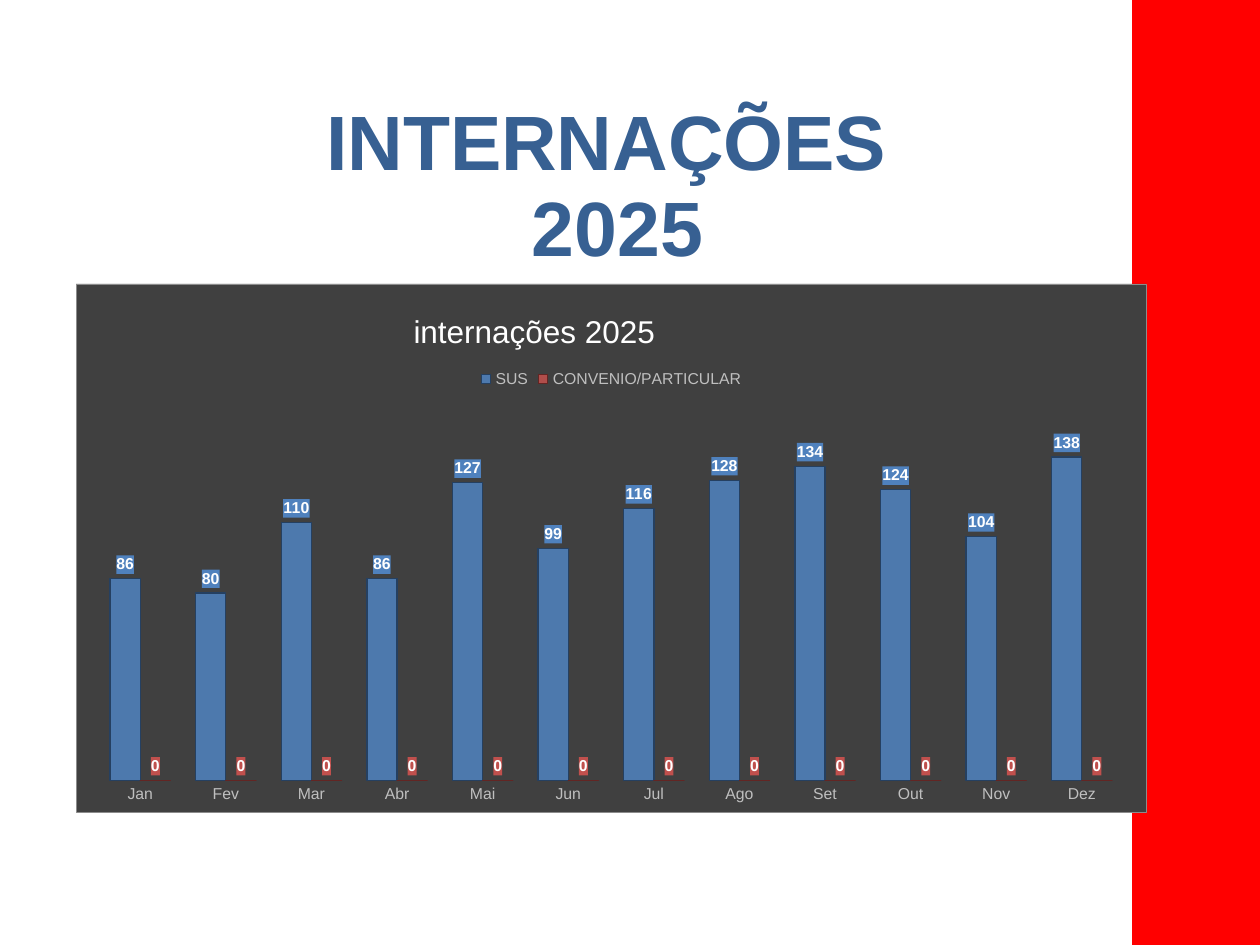
from lxml.etree import SubElement
from pptx import Presentation
from pptx.chart.data import CategoryChartData
from pptx.dml.color import RGBColor
from pptx.enum.chart import XL_CHART_TYPE, XL_LABEL_POSITION, XL_LEGEND_POSITION, XL_TICK_MARK
from pptx.enum.shapes import MSO_SHAPE
from pptx.enum.text import MSO_ANCHOR, PP_ALIGN
from pptx.oxml import parse_xml
from pptx.oxml.ns import nsdecls, qn
from pptx.util import Inches, Pt

MONTHS = ["Jan", "Fev", "Mar", "Abr", "Mai", "Jun", "Jul", "Ago", "Set", "Out", "Nov", "Dez"]
ADMISSIONS = {
    "SUS": [86, 80, 110, 86, 127, 99, 116, 128, 134, 124, 104, 138],
    "CONVENIO/PARTICULAR": [0] * len(MONTHS),
}


def color(hex_string):
    """Turn a hex string into a colour."""
    return RGBColor.from_string(hex_string)


def paint(fill, hex_string):
    """Make a fill solid in one colour."""
    fill.solid()
    fill.fore_color.rgb = color(hex_string)


def outline(line, hex_string, width):
    """Set the colour and the width in points of a line."""
    line.color.rgb = color(hex_string)
    line.width = Pt(width)


def format_font(font, size, hex_string, bold=False, name="Arial"):
    """Set the typeface, size, colour and weight of a font."""
    font.name, font.size, font.bold = name, Pt(size), bold
    font.color.rgb = color(hex_string)


def write(frame, text, align=PP_ALIGN.CENTER, spacing=None, **font_format):
    """Write one formatted paragraph into a text frame."""
    paragraph = frame.paragraphs[0]
    paragraph.text = text
    paragraph.alignment = align
    if spacing:
        paragraph.line_spacing = spacing
    for run in paragraph.runs:
        format_font(run.font, **font_format)


def set_layout(element, target=None, **shares):
    """Place a chart part by shares of the chart's size."""
    for old_layout in element.findall(qn("c:layout")):
        element.remove(old_layout)
    layout = parse_xml(f"<c:layout {nsdecls('c')}><c:manualLayout/></c:layout>")
    manual = layout[0]
    if target:
        SubElement(manual, qn("c:layoutTarget")).set("val", target)
    for side in "xy":
        SubElement(manual, qn(f"c:{side}Mode")).set("val", "edge")
    for side, share in shares.items():
        SubElement(manual, qn(f"c:{side}")).set("val", str(share))
    text = element.find(qn("c:tx"))
    element.insert(0 if text is None else 1, layout)


class SlideBuilder:
    """Hold the style and the current slide, and add elements to it."""

    accent, heading, panel, muted, white = "FF0000", "376092", "404040", "BFBFBF", "FFFFFF"
    series_styles = [("4F81BD", "254061"), ("C0504D", "632523")]

    def __init__(self, presentation):
        """Add a blank slide to the presentation."""
        self.width, self.height = presentation.slide_width, presentation.slide_height
        self.slide = presentation.slides.add_slide(presentation.slide_layouts[6])
        paint(self.slide.background.fill, self.white)

    def box(self, left, top, width, height):
        """Turn shares of the slide into lengths."""
        return (int(left * self.width), int(top * self.height),
                int(width * self.width), int(height * self.height))

    def band(self, *shares):
        """Add a plain accent rectangle."""
        shape = self.slide.shapes.add_shape(MSO_SHAPE.RECTANGLE, *self.box(*shares))
        shape.shadow.inherit = False
        paint(shape.fill, self.accent)
        outline(shape.line, self.accent, 2)

    def title(self, text, *shares):
        """Add the slide heading."""
        frame = self.slide.shapes.add_textbox(*self.box(*shares)).text_frame
        frame.word_wrap = True
        frame.vertical_anchor = MSO_ANCHOR.TOP
        write(frame, text, spacing=0.94, size=44, hex_string=self.heading, bold=True)

    def column_chart(self, title, categories, series, *shares):
        """Add a clustered column chart on a dark panel."""
        data = CategoryChartData()
        data.categories = categories
        for name, values in series.items():
            data.add_series(name, values)
        chart = self.slide.shapes.add_chart(
            XL_CHART_TYPE.COLUMN_CLUSTERED, *self.box(*shares), data).chart
        format_font(chart.font, 10, "000000")
        self.chart_panel(chart)
        self.chart_title(chart, title)
        self.chart_legend(chart)
        self.chart_axes(chart)
        plot = chart.plots[0]
        plot.gap_width, plot.overlap, plot.vary_by_categories = 84, 0, False
        for one_series, (fill, line) in zip(plot.series, self.series_styles):
            self.chart_series(one_series, fill, line)

    def chart_panel(self, chart):
        """Fill and frame the chart, and place its plot area."""
        space = chart._chartSpace
        properties = parse_xml(
            f"<c:spPr {nsdecls('c', 'a')}><a:solidFill><a:srgbClr val='{self.panel}'/></a:solidFill>"
            f"<a:ln w='{Pt(0.5)}'><a:solidFill><a:srgbClr val='8C8C8C'/></a:solidFill></a:ln></c:spPr>")
        space.find(qn("c:txPr")).addprevious(properties)
        set_layout(space.chart.plotArea, "inner", x=0.02, y=0.23, w=0.96, h=0.71)

    def chart_title(self, chart, text):
        """Write and place the chart title."""
        chart.has_title = True
        chart.chart_title.include_in_layout = False
        write(chart.chart_title.text_frame, text, size=18, hex_string=self.white)
        set_layout(chart.chart_title._element, x=0.31, y=0.04)

    def chart_legend(self, chart):
        """Put the legend above the columns."""
        chart.has_legend = True
        chart.legend.position = XL_LEGEND_POSITION.TOP
        chart.legend.include_in_layout = False
        format_font(chart.legend.font, 9, self.muted)

    def chart_axes(self, chart):
        """Show only the month names and hide the value axis."""
        months, values = chart.category_axis, chart.value_axis
        months.major_tick_mark = months.minor_tick_mark = XL_TICK_MARK.NONE
        months.format.line.fill.background()
        format_font(months.tick_labels.font, 9, self.muted)
        values.visible = values.has_major_gridlines = False
        values.minimum_scale, values.maximum_scale = 0, 160

    def chart_series(self, series, fill, line):
        """Colour the columns of a series and their value labels."""
        paint(series.format.fill, fill)
        solid_color = series._element.find(f".//{qn('a:srgbClr')}")
        SubElement(solid_color, qn("a:alpha")).set("val", "88000")
        outline(series.format.line, line, 0.75)
        series.smooth = False if hasattr(series, "smooth") else None
        labels = series.data_labels
        labels.show_value = True
        labels.position = XL_LABEL_POSITION.OUTSIDE_END
        format_font(labels.font, 9, self.white, bold=True)
        labels._element.find(qn("c:txPr")).addprevious(parse_xml(
            f"<c:spPr {nsdecls('c', 'a')}><a:solidFill><a:srgbClr val='{fill}'/></a:solidFill></c:spPr>"))


def main():
    """Build and save the presentation."""
    presentation = Presentation()
    presentation.slide_width, presentation.slide_height = Inches(10), Inches(7.5)
    builder = SlideBuilder(presentation)
    builder.band(0.9, 0, 0.12, 1)
    builder.title("INTERNAÇÕES \v2025", 0.22, 0.1, 0.54, 0.1)
    builder.column_chart("internações 2025", MONTHS, ADMISSIONS, 0.06, 0.3, 0.85, 0.56)
    presentation.save("out.pptx")


if __name__ == "__main__":
    main()
